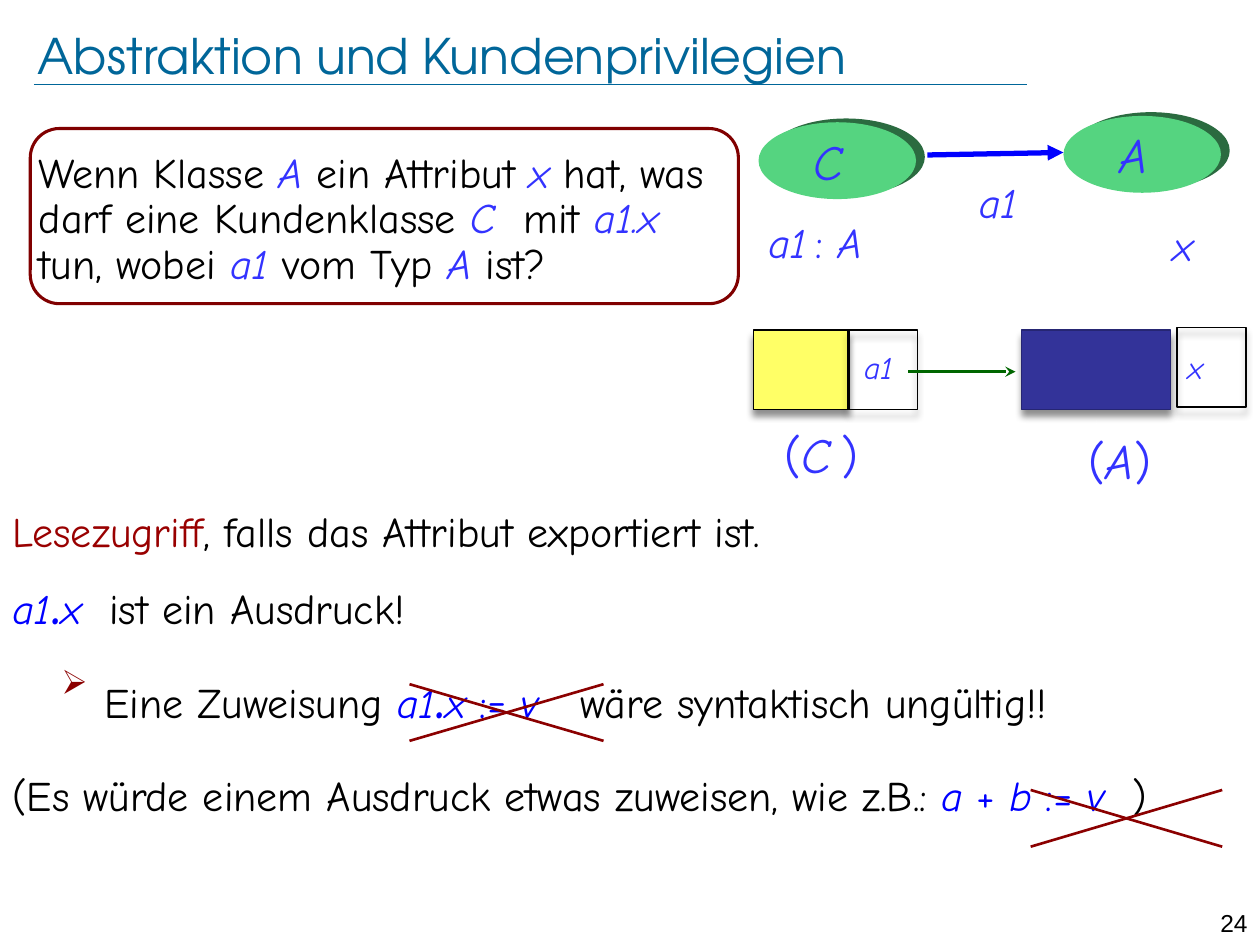
import pptx
import pptx.util
import pptx.dml.color
import pptx.enum.shapes
import pptx.enum.text
import pptx.oxml
from pptx.oxml.ns import qn, nsdecls

Inches = pptx.util.Inches
Pt = pptx.util.Pt
SHAPE = pptx.enum.shapes.MSO_SHAPE
ALIGN = pptx.enum.text.PP_ALIGN
ANCHOR = pptx.enum.text.MSO_ANCHOR

COLORS = {
    "title": "006699", "text": "000000", "term": "3333FF", "code": "0000FF",
    "accent": "990000", "cross": "8B0000", "frame": "800000",
    "class": "55D480", "class_side": "2B6B40", "link": "006600",
    "client": "FFFF66", "supplier": "333399", "supplier_line": "262673",
}
BODY_FONT = "Comic Neue"


def rgb(name):
    return pptx.dml.color.RGBColor.from_string(COLORS[name])


def add_runs(paragraph, runs, size, font=BODY_FONT):
    """Each run is (text, colour, italic) with an optional own size."""
    for text, color, italic, *own_size in runs:
        run = paragraph.add_run()
        run.text = text
        run.font.name = font
        run.font.size = Pt(own_size[0] if own_size else size)
        run.font.italic = italic
        run.font.color.rgb = rgb(color)


def set_frame(shape, insets, anchor=ANCHOR.TOP):
    frame = shape.text_frame
    frame.word_wrap = True
    frame.vertical_anchor = anchor
    (frame.margin_left, frame.margin_top,
     frame.margin_right, frame.margin_bottom) = [Inches(i) for i in insets]
    return frame


def add_text(slide, box, runs, size, align=ALIGN.LEFT, font=BODY_FONT,
             insets=(0.1, 0.05, 0.1, 0.05), anchor=ANCHOR.TOP):
    label = slide.shapes.add_textbox(*[Inches(v) for v in box])
    paragraph = set_frame(label, insets, anchor).paragraphs[0]
    paragraph.alignment = align
    add_runs(paragraph, runs, size, font)


def add_line(slide, start, end, color, width, arrow=None):
    line = slide.shapes.add_connector(
        pptx.enum.shapes.MSO_CONNECTOR.STRAIGHT,
        *[Inches(v) for v in (*start, *end)])
    line.line.color.rgb = rgb(color)
    line.line.width = Pt(width)
    if arrow:
        line.line._get_or_add_ln().append(pptx.oxml.parse_xml(
            f'<a:tailEnd {nsdecls("a")} type="{arrow}"/>'))
    line._element.spPr.append(
        pptx.oxml.parse_xml(f'<a:effectLst {nsdecls("a")}/>'))


def add_shape(slide, kind, box, fill=None, line=None, width=0.75, shadow=False):
    shape = slide.shapes.add_shape(kind, *[Inches(v) for v in box])
    shape.shadow.inherit = False
    if fill:
        shape.fill.solid()
        shape.fill.fore_color.rgb = rgb(fill)
    else:
        shape.fill.background()
    if line:
        shape.line.color.rgb = rgb(line)
        shape.line.width = Pt(width)
    else:
        shape.line.fill.background()
    if shadow:
        shape._element.spPr.find(qn("a:effectLst")).append(pptx.oxml.parse_xml(
            f'<a:outerShdw {nsdecls("a")} blurRad="{Pt(4)}" dist="{Pt(4)}" '
            'dir="5400000" rotWithShape="0"><a:srgbClr val="000000">'
            '<a:alpha val="43000"/></a:srgbClr></a:outerShdw>'))
    return shape


def add_header(slide, left, top, width, height):
    add_line(slide, (0.27, 0.67), (8.15, 0.67), "title", 0.25)
    add_text(slide, (left, top, width, height),
             [("Abstraktion und Kundenprivilegien", "title", False)], 28,
             font="TeX Gyre Adventor", insets=(0, 0, 0, 0), anchor=ANCHOR.MIDDLE)


def add_question(slide, *box):
    question = add_shape(slide, SHAPE.ROUNDED_RECTANGLE, box,
                         line="frame", width=1.75)
    paragraph = set_frame(question, (0, 0.12, 0, 0)).paragraphs[0]
    paragraph.alignment = ALIGN.LEFT
    paragraph.line_spacing = 0.9
    parts = ["Wenn Klasse ", "A", " ein Attribut ", "x ",
             "hat, was darf eine Kundenklasse ", "C", "  mit ", "a1.x ",
             "tun, wobei ", "a1", " vom Typ ", "A", " ist?"]
    # Plain words and class or attribute names alternate
    add_runs(paragraph, [(part, "term" if i % 2 else "text", bool(i % 2))
                         for i, part in enumerate(parts)], 24)


def add_class(slide, left, top, name):
    """Ellipse with a raised edge and its class name."""
    add_shape(slide, SHAPE.OVAL, (left + 0.07, top - 0.03, 1.25, 0.61), "class_side")
    add_shape(slide, SHAPE.OVAL, (left, top, 1.25, 0.61), "class")
    add_text(slide, (left - 0.16, top + 0.03, 1.44, 0.55),
             [(name, "term", True)], 28, ALIGN.CENTER, insets=[0.04] * 4)


def add_class_diagram(slide, left, top):
    add_class(slide, left + 0.02, top + 0.05, "C")
    add_class(slide, left + 2.44, top, "A")
    add_line(slide, (left + 1.36, top + 0.31), (left + 2.44, top + 0.29),
             "code", 3, "triangle")
    add_text(slide, (left + 1.67, top + 0.43, 0.53, 0.5), [("a1", "term", True)], 24)
    add_text(slide, (left, top + 0.75, 1.19, 0.5),
             [("a1", "term", True), (" ", "term", True, 16),
              (": ", "term", False), ("A", "term", True)], 24)
    add_text(slide, (left + 3.21, top + 0.77, 0.53, 0.5), [("x", "term", True)], 24)


def add_object_diagram(slide, left, top):
    # Objects and their fields
    for x, y, width, fill, line in [
            (0, 0.02, 0.76, "client", "text"), (0.75, 0.02, 0.55, None, "text"),
            (2.13, 0.02, 1.18, "supplier", "supplier_line"),
            (3.36, 0, 0.55, None, "text")]:
        add_shape(slide, SHAPE.RECTANGLE, (left + x, top + y, width, 0.63),
                  fill, line, shadow=True)
    for x, width, name in [(0.78, 0.94, "a1"), (3.35, 0.52, "x")]:
        add_text(slide, (left + x, top + 0.11, width, 0.4),
                 [(name, "term", True)], 18)
    add_line(slide, (left + 1.23, top + 0.35), (left + 2.08, top + 0.35),
             "link", 1.5, "stealth")
    # Types below the objects
    for x, y, name, gap in [(-0.01, 0.73, "C", [(" ", "term", True, 18)]),
                            (2.36, 0.78, "A", [])]:
        add_text(slide, (left + x, top + y, 1.1, 0.55),
                 [("(", "term", False), (name, "term", True), *gap,
                  (")", "term", False)],
                 28, ALIGN.CENTER, insets=[0.04] * 4)


def add_cross(slide, left, top, width, height):
    right, bottom = left + width, top + height
    add_line(slide, (left, bottom), (right, top), "cross", 1.5)
    add_line(slide, (right, bottom), (left, top), "cross", 1.5)


def add_explanation(slide, *box):
    explanation = slide.shapes.add_textbox(*[Inches(v) for v in box])
    frame = set_frame(explanation, (0.1, 0.05, 0.1, 0.05))
    access = [("a1", "code", True), (".", "code", False, 40)]
    # Space before, line spacing, bulleted, runs
    statements = [
        (0, 0.9, False, [("Lesezugriff", "accent", False),
                         (", falls das Attribut exportiert ist.", "text", False)]),
        (4, 0.9, False, [*access, ("x  ", "code", True),
                         ("ist ein Ausdruck!", "text", False)]),
        (22, 0.6, True, [("Eine Zuweisung ", "text", False), *access,
                         ("x", "code", True), (" := ", "code", False),
                         ("v", "code", True),
                         ("   wäre syntaktisch ungültig!!", "text", False)]),
        (27, 0.9, False, [
            ("(Es würde einem Ausdruck etwas zuweisen, wie z.B.: ", "text", False),
            ("a", "code", True), (" + ", "code", False), ("b ", "code", True),
            (":= ", "code", False), ("v  ", "code", True), (")", "text", False)]),
    ]
    for i, (before, spacing, bulleted, runs) in enumerate(statements):
        paragraph = frame.add_paragraph() if i else frame.paragraphs[0]
        paragraph.line_spacing = spacing
        if before:
            paragraph.space_before = Pt(before)
        if bulleted:
            properties = paragraph._p.get_or_add_pPr()
            properties.set("marL", str(Inches(0.73)))
            properties.set("indent", str(Inches(-0.34)))
            for bullet in (f'<a:buClr {nsdecls("a")}><a:srgbClr val="{COLORS["cross"]}"/></a:buClr>',
                           f'<a:buSzPct {nsdecls("a")} val="80000"/>',
                           f'<a:buChar {nsdecls("a")} char="➢"/>'):
                properties.append(pptx.oxml.parse_xml(bullet))
        add_runs(paragraph, runs, 24)
    # Invalid assignments are crossed out
    add_cross(slide, 3.25, 5.43, 1.54, 0.45)
    add_cross(slide, 8.18, 6.27, 1.52, 0.45)


def main():
    deck = pptx.Presentation()
    deck.slide_width, deck.slide_height = Inches(10), Inches(7.5)
    slide = deck.slides.add_slide(deck.slide_layouts[6])
    add_header(slide, 0.3, 0.04, 8.89, 0.79)
    add_explanation(slide, 0, 4.01, 10, 2.85)
    add_question(slide, 0.24, 1.02, 5.62, 1.39)
    add_class_diagram(slide, 6, 0.92)
    add_object_diagram(slide, 5.98, 2.6)
    # Slide number
    add_text(slide, (9.45, 7.16, 0.55, 0.24), [("24", "text", False)], 14,
             ALIGN.RIGHT, "Arial")
    deck.save("out.pptx")


if __name__ == "__main__":
    main()
